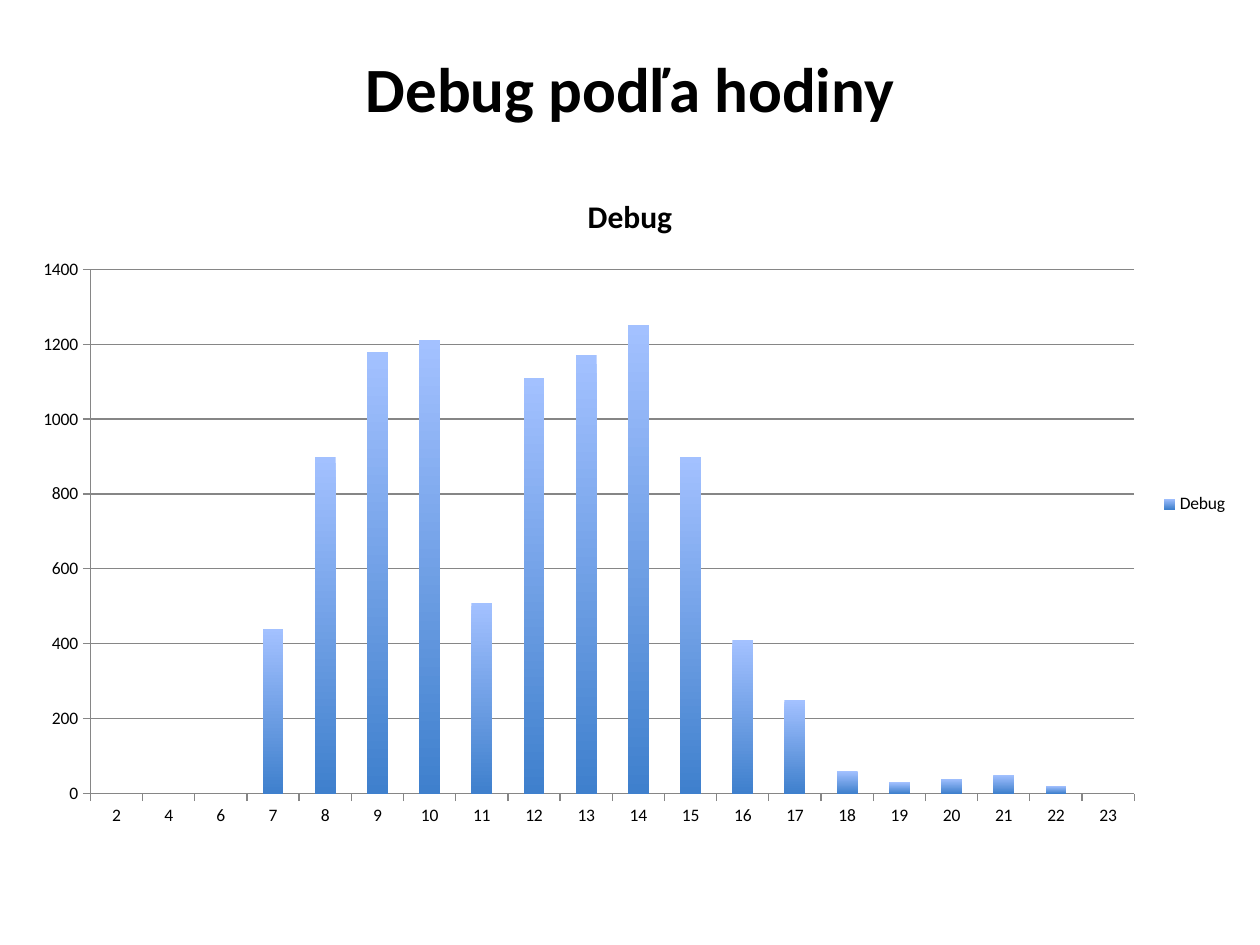
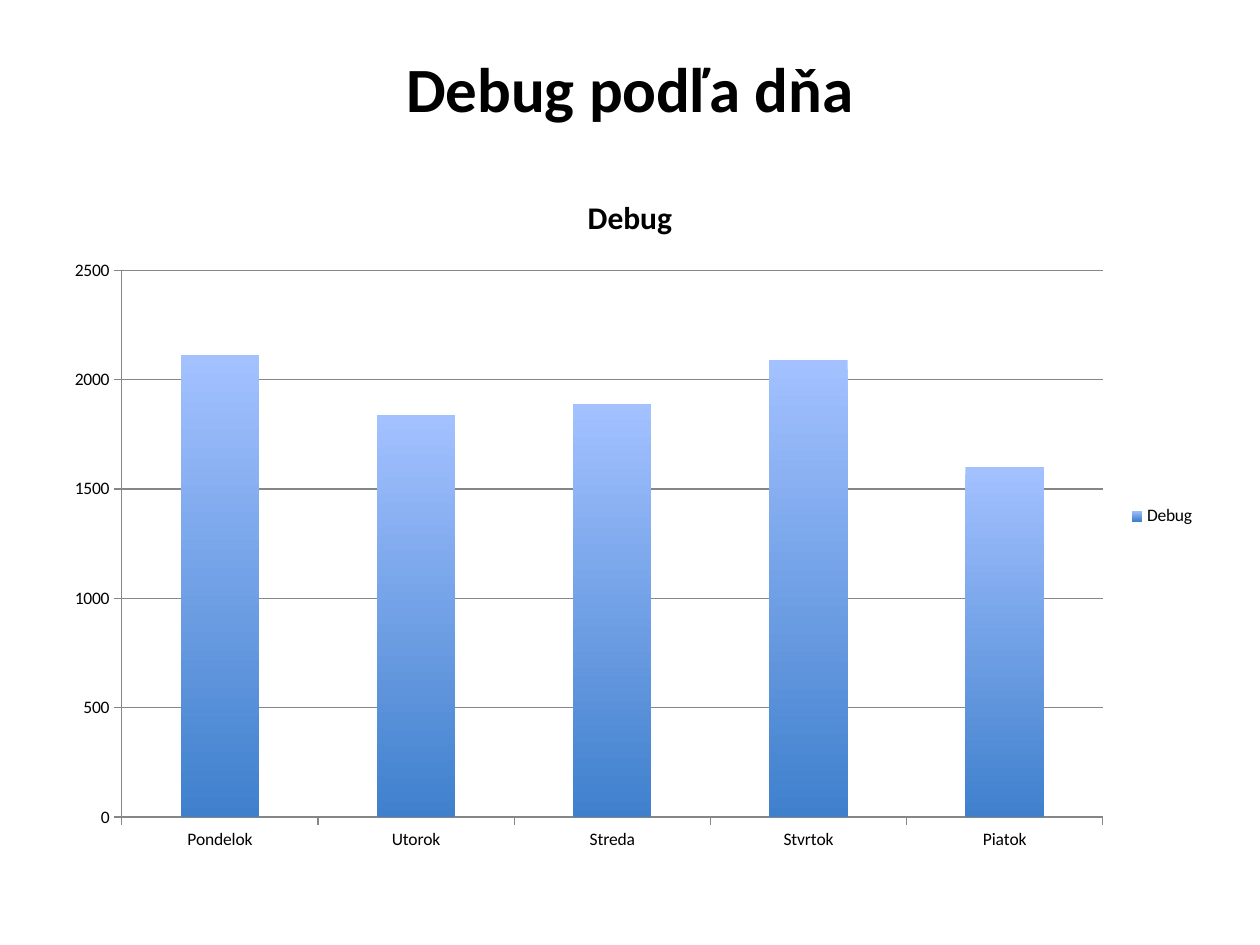
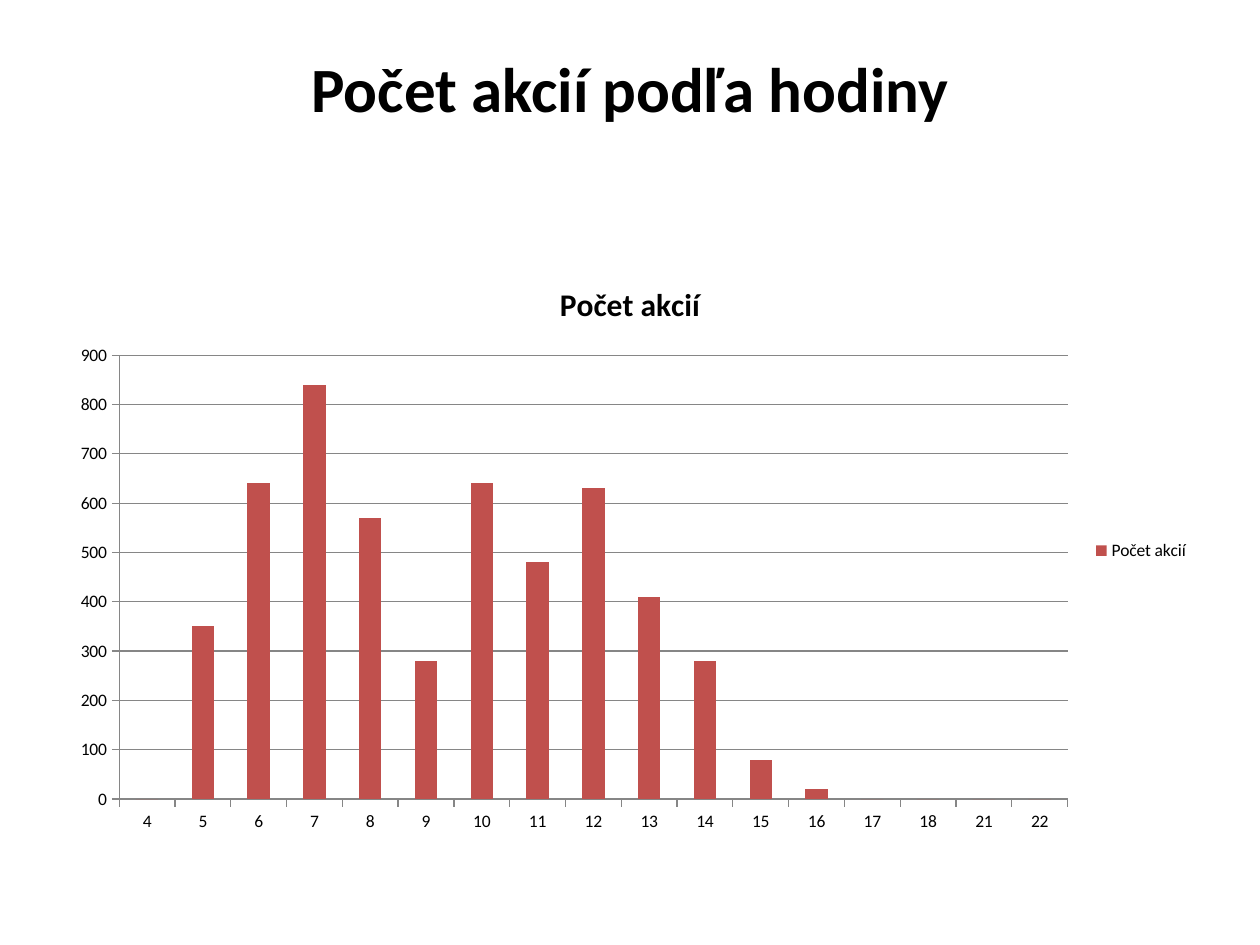
from pptx import Presentation
from pptx.chart.data import CategoryChartData
from pptx.dml.color import RGBColor
from pptx.enum.chart import XL_CHART_TYPE as ChartType
from pptx.enum.chart import XL_LEGEND_POSITION as LegendPosition
from pptx.enum.chart import XL_TICK_MARK as TickMark
from pptx.enum.text import MSO_ANCHOR as Anchor
from pptx.enum.text import PP_ALIGN as Align
from pptx.util import Inches, Pt

COLORS = {
    "text": "000000",
    "axis": "868686",
    "blue_light": "A3C1FF",
    "blue_dark": "3F80CD",
    "red": "C0504D",
}
FONT = "Calibri"
SLIDE_WIDTH = 10
SLIDE_HEIGHT = 7.5
TITLE_ONLY = 5


class Deck:
    def __init__(self):
        self.presentation = Presentation()
        self.presentation.slide_width = Inches(SLIDE_WIDTH)
        self.presentation.slide_height = Inches(SLIDE_HEIGHT)
        self.slide = None

    def color(self, name):
        return RGBColor.from_string(COLORS[name])

    def style_font(self, font, size, bold=False):
        font.name = FONT
        font.size = Pt(size)
        font.bold = bold
        font.color.rgb = self.color("text")

    def place(self, top, width, height):
        left = (SLIDE_WIDTH - width) / 2
        return Inches(left), Inches(top), Inches(width), Inches(height)

    def add_slide(self):
        layout = self.presentation.slide_layouts[TITLE_ONLY]
        self.slide = self.presentation.slides.add_slide(layout)

    def add_title(self, text, width):
        title = self.slide.shapes.title
        title.left, title.top, title.width, title.height = self.place(0.34, width, 0.71)
        text_frame = title.text_frame
        text_frame.text = text
        text_frame.word_wrap = False
        text_frame.vertical_anchor = Anchor.MIDDLE
        paragraph = text_frame.paragraphs[0]
        paragraph.alignment = Align.CENTER
        self.style_font(paragraph.runs[0].font, 36, bold=True)

    def style_axis(self, axis):
        axis.major_tick_mark = TickMark.OUTSIDE
        axis.minor_tick_mark = TickMark.NONE
        self.style_line(axis.format.line)

    def style_line(self, line):
        line.color.rgb = self.color("axis")
        line.width = Pt(0.75)

    def fill_bars(self, fill, color_names):
        if len(color_names) == 1:
            fill.solid()
            fill.fore_color.rgb = self.color(color_names[0])
            return
        fill.gradient()
        fill.gradient_angle = 270
        for stop, name in zip(fill.gradient_stops, color_names):
            stop.color.rgb = self.color(name)

    def add_column_chart(self, name, values, color_names, top, width, height):
        data = CategoryChartData()
        data.categories = list(values.keys())
        data.add_series(name, list(values.values()))
        chart = self.slide.shapes.add_chart(
            ChartType.COLUMN_CLUSTERED, *self.place(top, width, height), data
        ).chart
        self.style_font(chart.font, 10)

        chart.has_title = True
        chart.chart_title.include_in_layout = False
        chart.chart_title.text_frame.text = name
        title_run = chart.chart_title.text_frame.paragraphs[0].runs[0]
        self.style_font(title_run.font, 18, bold=True)

        chart.has_legend = True
        chart.legend.position = LegendPosition.RIGHT
        chart.legend.include_in_layout = False

        self.style_axis(chart.category_axis)
        self.style_axis(chart.value_axis)
        chart.value_axis.has_major_gridlines = True
        self.style_line(chart.value_axis.major_gridlines.format.line)

        plot = chart.plots[0]
        plot.vary_by_categories = False
        plot.gap_width = 150
        self.fill_bars(plot.series[0].format.fill, color_names)

    def save(self):
        self.presentation.save("out.pptx")


DEBUG_BY_HOUR = {
    "2": 0, "4": 0, "6": 0, "7": 440, "8": 900, "9": 1180, "10": 1210,
    "11": 510, "12": 1110, "13": 1170, "14": 1250, "15": 900, "16": 410,
    "17": 250, "18": 60, "19": 30, "20": 40, "21": 50, "22": 20, "23": 0,
}
DEBUG_BY_DAY = {
    "Pondelok": 2110, "Utorok": 1840, "Streda": 1890, "Stvrtok": 2090, "Piatok": 1600,
}
ACTIONS_BY_HOUR = {
    "4": 0, "5": 350, "6": 640, "7": 840, "8": 570, "9": 280, "10": 640,
    "11": 480, "12": 630, "13": 410, "14": 280, "15": 80, "16": 20,
    "17": 0, "18": 0, "21": 0, "22": 0,
}
BLUE = ("blue_light", "blue_dark")
RED = ("red",)

SLIDES = [
    ("Debug podľa hodiny", 4.45, "Debug", DEBUG_BY_HOUR, BLUE, (1.34, 9.7, 5.32)),
    ("Debug podľa dňa", 3.79, "Debug", DEBUG_BY_DAY, BLUE, (1.34, 9.18, 5.51)),
    ("Počet akcií podľa hodiny", 5.34, "Počet akcií", ACTIONS_BY_HOUR, RED, (2.05, 9.08, 4.64)),
]


def main():
    deck = Deck()
    for title, title_width, series_name, values, color_names, chart_box in SLIDES:
        deck.add_slide()
        deck.add_column_chart(series_name, values, color_names, *chart_box)
        deck.add_title(title, title_width)
    deck.save()


if __name__ == "__main__":
    main()
